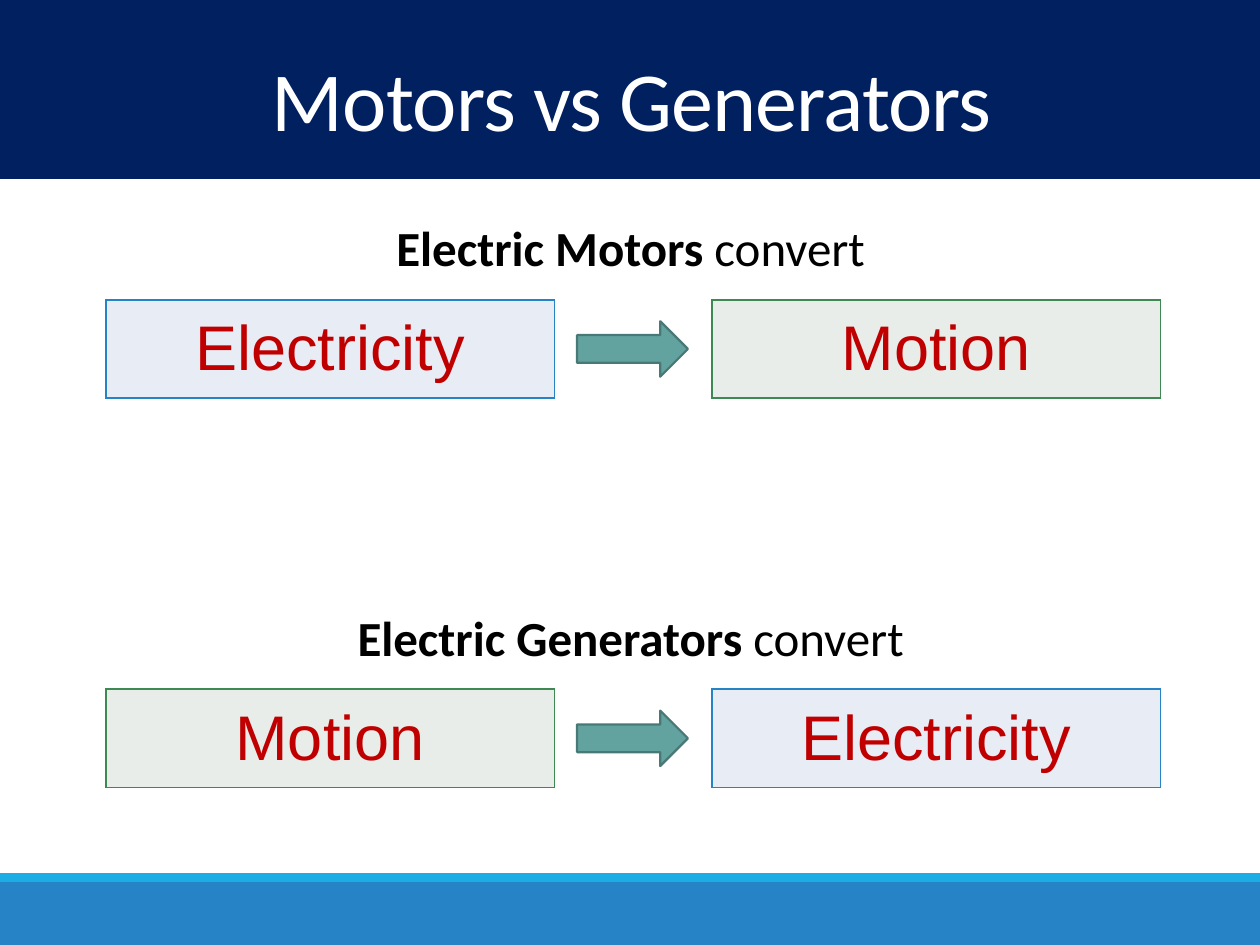
"""Build the slide that compares electric motors with generators."""
import lxml.etree
import pptx
import pptx.dml.color
import pptx.enum.shapes
import pptx.enum.text
import pptx.oxml.ns
import pptx.util

Inches = pptx.util.Inches
Shapes = pptx.enum.shapes.MSO_SHAPE

TITLE = "Motors vs Generators"
CONVERSIONS = [
    ("Electric Motors ", "Electricity", "Motion"),
    ("Electric Generators ", "Motion", "Electricity"),
]
BANDS = [("footer", 7, 0.5), ("accent", 6.93, 0.07), ("header", 0, 1.42)]
THEME = {
    "colors": {
        "footer": "2683C6", "accent": "1CADE4", "header": "002060",
        "title": "FFFFFF", "caption": "000000", "energy": "C00000",
        "arrow": "62A39F", "arrow_line": "497976",
    },
    "energy": {"Electricity": ("E8EDF5", "2683C6"), "Motion": ("E8EDE9", "3E8853")},
    "sizes": {"title": 48, "caption": 28, "energy": 36},
    "fonts": {"title": "Calibri", "caption": "Calibri", "energy": "Arial"},
}
FIRST_ROW, ROW_STEP = 1.68, 3.09
CAPTION_LEFT, CAPTION_WIDTH, CAPTION_HEIGHT = 1.49, 7.03, 0.57
BOX_LEFTS, BOX_WIDTH, BOX_HEIGHT, BOX_OFFSET = (0.84, 5.65), 3.56, 0.78, 0.7
ARROW_LEFT, ARROW_WIDTH, ARROW_HEIGHT = 4.58, 0.88, 0.44


def rgb(value):
    return pptx.dml.color.RGBColor.from_string(value)


def place(left, top, width, height):
    return [Inches(value) for value in (left, top, width, height)]


def write(paragraph, role, *texts, bold=(False,)):
    paragraph.alignment = pptx.enum.text.PP_ALIGN.CENTER
    for text, is_bold in zip(texts, bold):
        run = paragraph.add_run()
        run.text = text
        formats = {"name": THEME["fonts"][role], "bold": is_bold,
                   "size": pptx.util.Pt(THEME["sizes"][role])}
        for name, value in formats.items():
            setattr(run.font, name, value)
        run.font.color.rgb = rgb(THEME["colors"][role])


def add_filled(slide, kind, box, color):
    shape = slide.shapes.add_shape(kind, *place(*box))
    shape.shadow.inherit = False
    shape.fill.solid()
    shape.fill.fore_color.rgb = rgb(THEME["colors"][color])
    shape.line.fill.background()
    return shape


def add_title(slide):
    title = slide.shapes.title
    title.element.getparent().append(title.element)
    title.left, title.top, title.width, title.height = place(0.03, 0.42, 9.97, 0.84)
    frame = title.text_frame
    formats = {"word_wrap": True, "vertical_anchor": pptx.enum.text.MSO_ANCHOR.MIDDLE,
               "auto_size": pptx.enum.text.MSO_AUTO_SIZE.NONE}
    for name, value in formats.items():
        setattr(frame, name, value)
    paragraph = frame.paragraphs[0]
    paragraph.line_spacing = 0.85
    write(paragraph, "title", TITLE)
    paragraph.runs[0].font._element.set("spc", "-50")


def add_caption(slide, top, subject):
    box = slide.shapes.add_textbox(
        *place(CAPTION_LEFT, top, CAPTION_WIDTH, CAPTION_HEIGHT))
    box.text_frame.word_wrap = True
    box.text_frame.auto_size = pptx.enum.text.MSO_AUTO_SIZE.SHAPE_TO_FIT_TEXT
    write(box.text_frame.paragraphs[0], "caption", subject, "convert", bold=(True, False))


def set_borders(cell, color):
    properties = cell._tc.get_or_add_tcPr()
    qn = pptx.oxml.ns.qn
    for index, side in enumerate(("lnL", "lnR", "lnT", "lnB")):
        line = lxml.etree.Element(qn(f"a:{side}"), w=str(pptx.util.Pt(1)))
        fill = lxml.etree.SubElement(line, qn("a:solidFill"))
        lxml.etree.SubElement(fill, qn("a:srgbClr"), val=color)
        properties.insert(index, line)


def add_energy(slide, left, top, energy):
    table = slide.shapes.add_table(1, 1, *place(left, top, BOX_WIDTH, BOX_HEIGHT)).table
    table.first_row = table.horz_banding = False
    cell = table.cell(0, 0)
    fill, border = THEME["energy"][energy]
    cell.fill.solid()
    cell.fill.fore_color.rgb = rgb(fill)
    cell.vertical_anchor = pptx.enum.text.MSO_ANCHOR.MIDDLE
    set_borders(cell, border)
    write(cell.text_frame.paragraphs[0], "energy", energy)


def add_conversion(slide, top, subject, *energies):
    add_caption(slide, top, subject)
    box_top = top + BOX_OFFSET
    for left, energy in zip(BOX_LEFTS, energies):
        add_energy(slide, left, box_top, energy)
    arrow_top = box_top + (BOX_HEIGHT - ARROW_HEIGHT) / 2
    arrow = add_filled(slide, Shapes.RIGHT_ARROW,
                       (ARROW_LEFT, arrow_top, ARROW_WIDTH, ARROW_HEIGHT), "arrow")
    arrow.line.color.rgb = rgb(THEME["colors"]["arrow_line"])
    arrow.line.width = pptx.util.Pt(1.25)


def main():
    presentation = pptx.Presentation()
    presentation.slide_width, presentation.slide_height = Inches(10), Inches(7.5)
    slide = presentation.slides.add_slide(presentation.slide_layouts[5])
    for color, top, height in BANDS:
        add_filled(slide, Shapes.RECTANGLE, (0, top, 10, height), color)
    add_title(slide)
    for index, conversion in enumerate(CONVERSIONS):
        add_conversion(slide, FIRST_ROW + index * ROW_STEP, *conversion)
    presentation.save("out.pptx")


if __name__ == "__main__":
    main()
